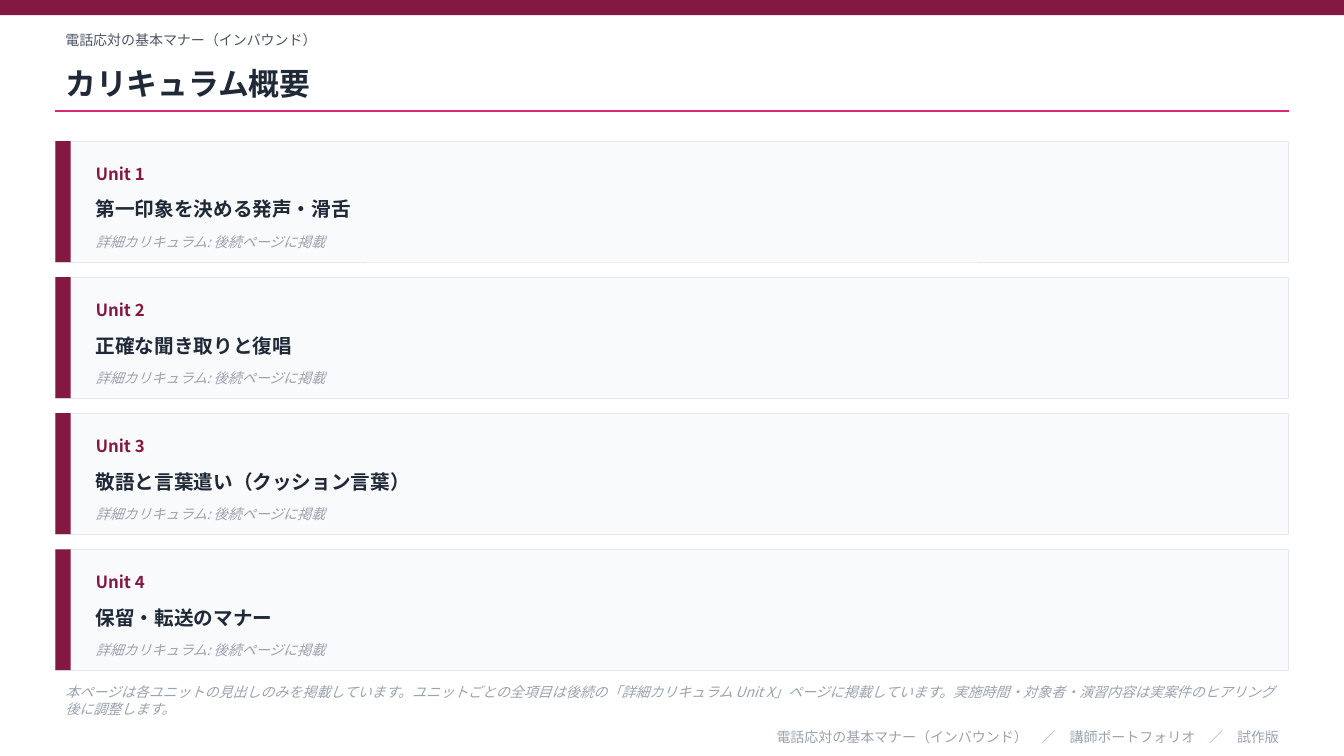
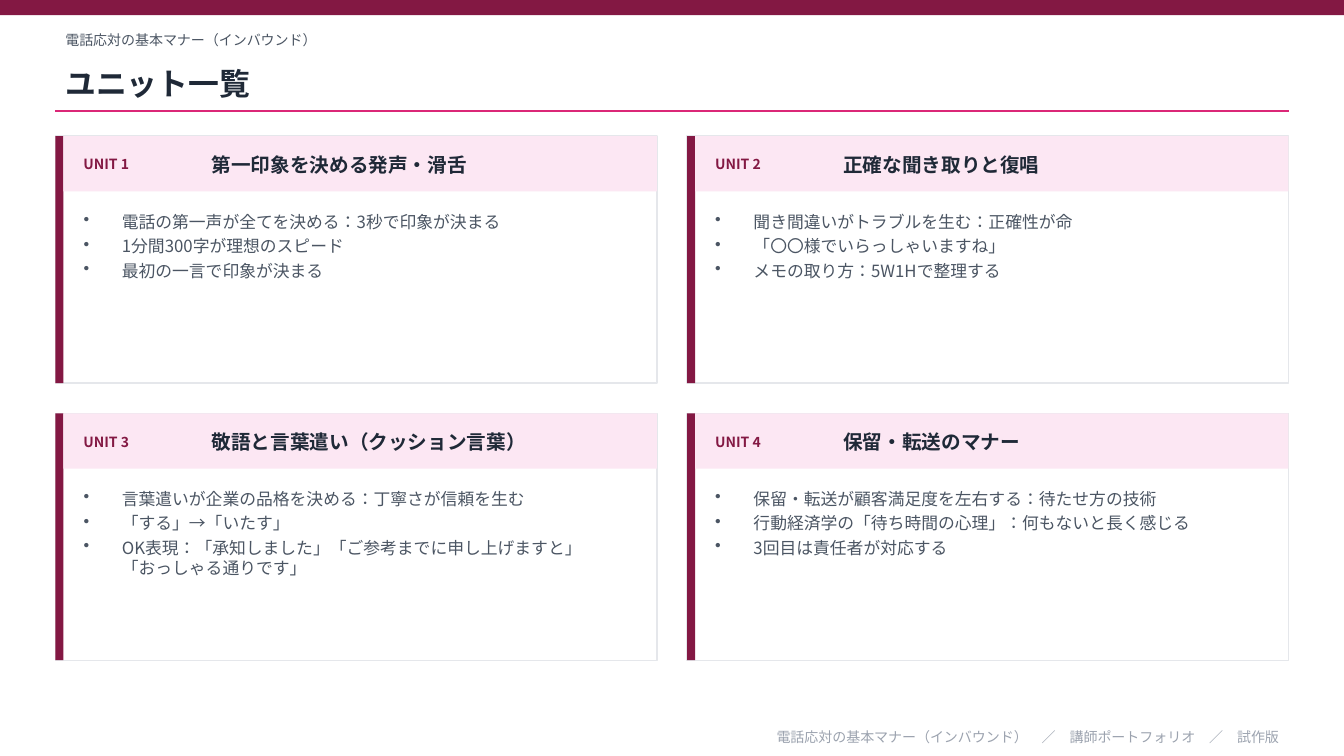
import pptx
import pptx.util
import pptx.dml.color
import pptx.enum.dml
import pptx.enum.lang
import pptx.enum.shapes
import pptx.enum.text
import pptx.oxml.ns
import lxml.etree

WIDE, HIGH = 13.33, 7.5
EDGE = 0.55
SPAN = WIDE - 2 * EDGE
FACE = "Noto Sans CJK JP"
HUES = {
    "wine": "831843", "rose": "DB2777", "blush": "FCE7F3", "ink": "1F2937",
    "slate": "4B5563", "mute": "9CA3AF", "rule": "E5E7EB", "mist": "F9FAFB",
    "white": "FFFFFF",
}
COURSE = "電話応対の基本マナー（インバウンド）"
FOOT = COURSE + "　／　講師ポートフォリオ　／　試作版"
DETAIL = "詳細カリキュラム: 後続ページに掲載"
NOTE = ("本ページは各ユニットの見出しのみを掲載しています。"
        "ユニットごとの全項目は後続の「詳細カリキュラム Unit X」ページに掲載しています。"
        "実施時間・対象者・演習内容は実案件のヒアリング後に調整します。")
UNITS = [
    ("第一印象を決める発声・滑舌",
     ["電話の第一声が全てを決める：3秒で印象が決まる",
      "1分間300字が理想のスピード",
      "最初の一言で印象が決まる"]),
    ("正確な聞き取りと復唱",
     ["聞き間違いがトラブルを生む：正確性が命",
      "「〇〇様でいらっしゃいますね」",
      "メモの取り方：5W1Hで整理する"]),
    ("敬語と言葉遣い（クッション言葉）",
     ["言葉遣いが企業の品格を決める：丁寧さが信頼を生む",
      "「する」→「いたす」",
      "OK表現：「承知しました」「ご参考までに申し上げますと」「おっしゃる通りです」"]),
    ("保留・転送のマナー",
     ["保留・転送が顧客満足度を左右する：待たせ方の技術",
      "行動経済学の「待ち時間の心理」：何もないと長く感じる",
      "3回目は責任者が対応する"]),
]


def hue(name):
    """Return the named colour."""
    return pptx.dml.color.RGBColor.from_string(HUES[name])


def inch(*nums):
    """Turn inches into slide lengths."""
    return [pptx.util.Inches(num) for num in nums]


def rect(slide, box, fill, line=None, thick=1):
    """Draw a flat rectangle with an optional outline."""
    kind = pptx.enum.shapes.MSO_SHAPE.RECTANGLE
    shape = slide.shapes.add_shape(kind, *inch(*box))
    shape.shadow.inherit = False
    shape.fill.solid()
    shape.fill.fore_color.rgb = hue(fill)
    if line:
        shape.line.color.rgb = hue(line)
        shape.line.width = pptx.util.Pt(thick)
    else:
        shape.line.fill.background()


def style(para, size, color, bold=False, slant=False):
    """Format every run of a paragraph."""
    for run in para.runs:
        font = run.font
        font.size = pptx.util.Pt(size)
        font.bold, font.italic = bold, slant
        font.color.rgb = hue(color)
        font.name = FACE
        font.language_id = pptx.enum.lang.MSO_LANGUAGE_ID.JAPANESE
        tag = pptx.oxml.ns.qn("a:ea")
        lxml.etree.SubElement(run._r.get_or_add_rPr(), tag, typeface=FACE)


def label(slide, box, text, size, color, bold=False, slant=False, right=False):
    """Place one vertically centred paragraph."""
    frame = slide.shapes.add_textbox(*inch(*box)).text_frame
    frame.word_wrap = True
    frame.vertical_anchor = pptx.enum.text.MSO_ANCHOR.MIDDLE
    frame.text = text
    para = frame.paragraphs[0]
    if right:
        para.alignment = pptx.enum.text.PP_ALIGN.RIGHT
    style(para, size, color, bold, slant)


def points(slide, box, items):
    """Place a bulleted list."""
    frame = slide.shapes.add_textbox(*inch(*box)).text_frame
    frame.word_wrap = True
    dent = pptx.util.Inches(0.38)
    for num, item in enumerate(items):
        para = frame.add_paragraph() if num else frame.paragraphs[0]
        para.text = item
        para.space_after = pptx.util.Pt(3)
        props = para._p.get_or_add_pPr()
        props.set("marL", str(dent))
        props.set("indent", str(-dent))
        tag = pptx.oxml.ns.qn("a:buChar")
        lxml.etree.SubElement(props, tag, char="•")
        style(para, 12, "slate")


def base(deck, title):
    """Add a slide with the shared band, heading, rule and footer."""
    slide = deck.slides.add_slide(deck.slide_layouts[6])
    rect(slide, (0, 0, WIDE, 0.15), "wine")
    label(slide, (EDGE, 0.25, SPAN, 0.3), COURSE, 10, "slate")
    label(slide, (EDGE, 0.55, SPAN, 0.55), title, 22, "ink", bold=True)
    kind = pptx.enum.shapes.MSO_CONNECTOR.STRAIGHT
    ends = inch(EDGE, 1.1, EDGE + SPAN, 1.1)
    line = slide.shapes.add_connector(kind, *ends)
    line.line.color.rgb = hue("rose")
    line.line.width = pptx.util.Pt(1)
    tag = pptx.oxml.ns.qn("a:effectLst")
    lxml.etree.SubElement(line._element.spPr, tag)
    label(slide, (EDGE, 7.2, SPAN, 0.22), FOOT, 10, "mute", right=True)
    return slide


def strip(slide, box, num, name):
    """Draw one full-width unit row."""
    left, top, wide, high = box
    rect(slide, box, "mist", "rule", 0.5)
    rect(slide, (left, top, 0.15, high), "wine")
    start, room = left + 0.3, wide - 0.5
    label(slide, (start, top + 0.12, 1.5, 0.4), f"Unit {num}", 12, "wine", bold=True)
    label(slide, (start, top + 0.45, room, 0.45), name, 14, "ink", bold=True)
    label(slide, (start, top + 0.85, room, 0.3), DETAIL, 10, "mute", slant=True)


def card(slide, box, num, name, items):
    """Draw one unit card with a tinted head and a list."""
    left, top, wide, high = box
    bar, head = 0.08, 0.55
    rect(slide, box, "white", "rule")
    rect(slide, (left, top, bar, high), "wine")
    rect(slide, (left + bar, top, wide - bar, head), "blush")
    start = left + 0.18
    label(slide, (start, top + 0.08, 1.2, 0.4), f"UNIT {num}", 10, "wine", bold=True)
    label(slide, (left + 1.45, top + 0.08, wide - 1.6, 0.4), name, 14, "ink", bold=True)
    points(slide, (start, top + 0.7, wide - 0.36, high - 0.85), items)


def outline(deck):
    """Build the curriculum slide from stacked rows."""
    slide = base(deck, "カリキュラム概要")
    high, gap = 1.2, 0.15
    for row, (name, _) in enumerate(UNITS):
        top = 1.4 + row * (high + gap)
        strip(slide, (EDGE, top, SPAN, high), row + 1, name)
    label(slide, (EDGE, 6.75, SPAN, 0.4), NOTE, 10, "mute", slant=True)


def roster(deck):
    """Build the unit slide from a two by two grid."""
    slide = base(deck, "ユニット一覧")
    gap, high = 0.3, 2.45
    wide = (SPAN - gap) / 2
    for num, (name, items) in enumerate(UNITS):
        row, col = divmod(num, 2)
        left = EDGE + col * (wide + gap)
        top = 1.35 + row * (high + gap)
        card(slide, (left, top, wide, high), num + 1, name, items)


def main():
    """Build and save the deck."""
    deck = pptx.Presentation()
    deck.slide_width, deck.slide_height = inch(WIDE, HIGH)
    outline(deck)
    roster(deck)
    deck.save("out.pptx")


if __name__ == "__main__":
    main()
